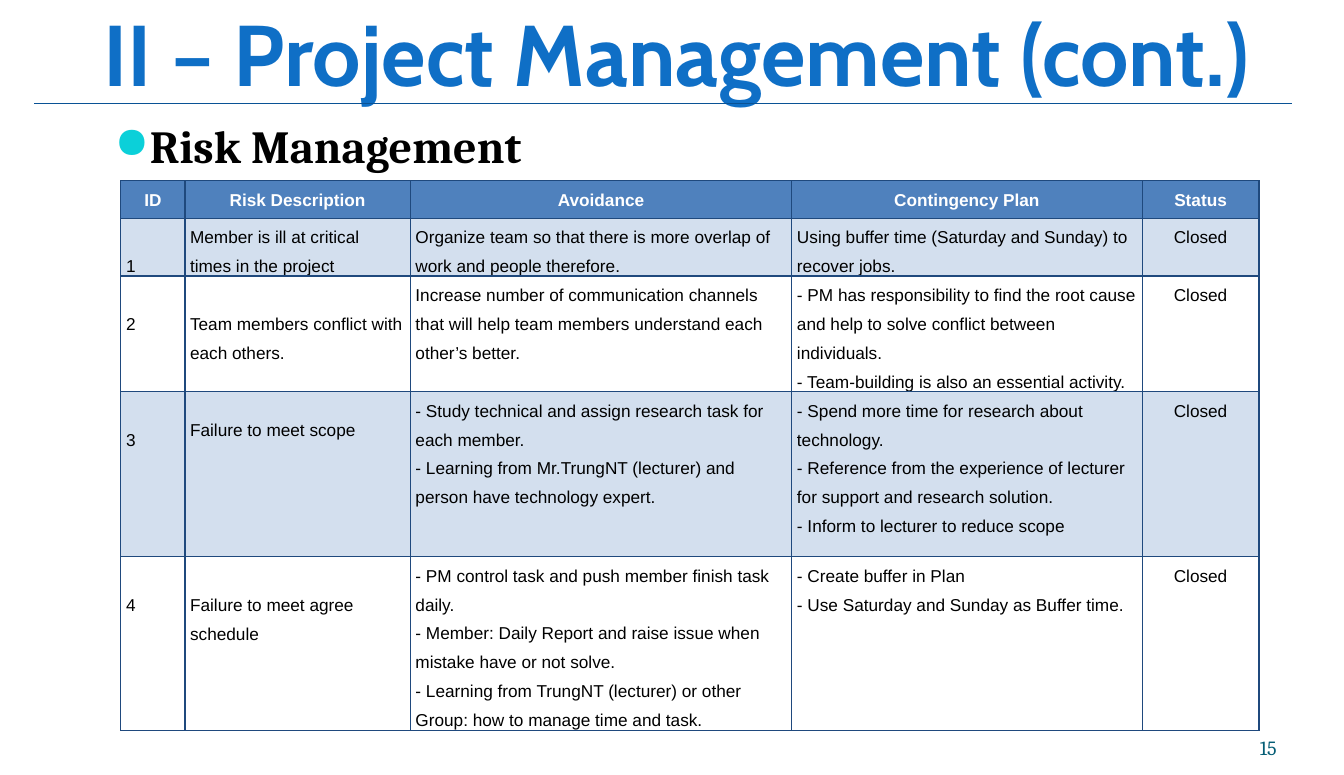
from lxml.etree import SubElement
from pptx import Presentation
from pptx.dml.color import RGBColor
from pptx.enum.shapes import MSO_CONNECTOR as Connector
from pptx.enum.text import MSO_ANCHOR as Anchor, MSO_AUTO_SIZE as AutoSize, PP_ALIGN as Align
from pptx.oxml.ns import qn
from pptx.util import Pt

BLUE = RGBColor(0x0F, 0x6F, 0xC6)
RULE_BLUE = RGBColor(0x09, 0x52, 0x95)
TEAL = RGBColor(0x04, 0x5D, 0x75)
CYAN = RGBColor(0x0B, 0xD0, 0xD9)
HEADER_BLUE = RGBColor(0x4F, 0x81, 0xBD)
BAND_BLUE = RGBColor(0xD3, 0xDF, 0xEE)
BORDER_NAVY = RGBColor(0x1F, 0x49, 0x7D)
WHITE = RGBColor(0xFF, 0xFF, 0xFF)
BLACK = RGBColor(0, 0, 0)

LINE_DROP = 20.2  # one table line at 1.5 spacing
HALF_DROP = 13.2

COLUMN_WIDTHS = [44.6, 157, 265.7, 244, 81.4]
ROW_HEIGHTS = [26, 38, 77, 115, 115]
HEADERS = ["ID", "Risk Description", "Avoidance", "Contingency Plan", "Status"]
# Each risk: drop of the description, description, avoidance, contingency plan
RISKS = [
    (0, "Member is ill at critical times in the project",
     ["Organize team so that there is more overlap of work and people therefore."],
     ["Using buffer time (Saturday and Sunday) to recover jobs."]),
    (LINE_DROP, "Team members conflict with each others.",
     ["Increase number of communication channels that will help team members "
      "understand each other’s better."],
     ["- PM has responsibility to find the root cause and help to solve conflict "
      "between individuals.",
      "- Team-building is also an essential activity."]),
    (HALF_DROP, "Failure to meet scope",
     ["- Study technical and assign research task for each member.",
      "- Learning from Mr.TrungNT (lecturer) and person have technology expert."],
     ["- Spend more time for research about technology.",
      "- Reference from the experience of lecturer for support and research solution.",
      "- Inform to lecturer to reduce scope"]),
    (LINE_DROP, "Failure to meet agree schedule",
     ["- PM control task and push member finish task daily.",
      "- Member: Daily Report and raise issue when mistake have or not solve.",
      "- Learning from TrungNT (lecturer) or other Group: how to manage time and task."],
     ["- Create buffer in Plan", "- Use Saturday and Sunday as Buffer time."]),
]


def add_solid_fill(parent, color):
    fill = SubElement(parent, qn("a:solidFill"))
    SubElement(fill, qn("a:srgbClr"), val=str(color))


class SlideBuilder:
    TITLE = dict(name="Cabin", size=Pt(60), bold=True, color=BLUE)
    HEADING = dict(name="Cambria", size=Pt(32), bold=True, color=BLACK)
    NUMBER = dict(name="Cambria", size=Pt(14), bold=False, color=TEAL)
    HEADER = dict(name="Arial", size=Pt(12), bold=True, color=WHITE)
    CELL = dict(name="Arial", size=Pt(12), bold=False, color=BLACK)

    def __init__(self, presentation):
        self.slide = presentation.slides.add_slide(presentation.slide_layouts[5])

    def format_font(self, font, style):
        for name, value in style.items():
            if name == "color":
                font.color.rgb = value
            else:
                setattr(font, name, value)

    def fill_text(self, frame, lines, style, align=Align.LEFT, spacing=None):
        for index, line in enumerate(lines):
            paragraph = frame.paragraphs[0] if index == 0 else frame.add_paragraph()
            paragraph.alignment = align
            paragraph.line_spacing = spacing
            run = paragraph.add_run()
            run.text = line
            self.format_font(run.font, style)

    def format_frame(self, frame, margins, anchor):
        settings = dict(zip(("margin_left", "margin_top", "margin_right", "margin_bottom"),
                            map(Pt, margins)))
        settings.update(word_wrap=True, auto_size=AutoSize.NONE, vertical_anchor=anchor)
        for name, value in settings.items():
            setattr(frame, name, value)

    def title(self, text, left, top, width, height):
        title = self.slide.shapes.title
        title.left, title.top, title.width, title.height = map(Pt, (left, top, width, height))
        self.format_frame(title.text_frame, (0, 4.3, 0, 0), Anchor.BOTTOM)
        self.fill_text(title.text_frame, [text], self.TITLE)
        properties = title.text_frame.paragraphs[0].runs[0].font._element
        outline = properties.makeelement(qn("a:ln"), {"w": str(Pt(1.45))})
        add_solid_fill(outline, WHITE)
        properties.insert(0, outline)

    def text(self, text, box, style, margins=(0, 0, 0, 0), anchor=Anchor.TOP, align=Align.LEFT):
        frame = self.slide.shapes.add_textbox(*map(Pt, box)).text_frame
        self.format_frame(frame, margins, anchor)
        self.fill_text(frame, [text], style, align)
        return frame.paragraphs[0]

    def bullet(self, paragraph, color, indent):
        properties = paragraph._p.get_or_add_pPr()
        properties.set("marL", str(Pt(indent)))
        properties.set("indent", str(Pt(-indent)))
        bullet_color = SubElement(properties, qn("a:buClr"))
        SubElement(bullet_color, qn("a:srgbClr"), val=str(color))
        SubElement(properties, qn("a:buSzPct"), val="95000")
        SubElement(properties, qn("a:buChar"), char="●")

    def rule(self, left, right, y):
        line = self.slide.shapes.add_connector(Connector.STRAIGHT, Pt(left), Pt(y), Pt(right), Pt(y))
        line.line.color.rgb = RULE_BLUE
        line.line.width = Pt(0.75)
        SubElement(line._element.spPr, qn("a:effectLst"))

    def table(self, left, top):
        shape = self.slide.shapes.add_table(
            len(ROW_HEIGHTS), len(COLUMN_WIDTHS), Pt(left), Pt(top),
            Pt(sum(COLUMN_WIDTHS)), Pt(sum(ROW_HEIGHTS)))
        table = shape.table
        for column, width in zip(table.columns, COLUMN_WIDTHS):
            column.width = Pt(width)
        for row, height in zip(table.rows, ROW_HEIGHTS):
            row.height = Pt(height)
        return table

    def cell(self, cell, lines, style, fill=None, align=Align.LEFT, drop=0):
        """Fill one table cell; drop is the gap above its text."""
        cell.margin_left = cell.margin_right = Pt(3.6)
        cell.margin_top, cell.margin_bottom = Pt(drop), Pt(0)
        cell.vertical_anchor = Anchor.TOP
        self.fill_text(cell.text_frame, lines, style, align, 1.5)
        properties = cell._tc.get_or_add_tcPr()
        for side in ("lnL", "lnR", "lnT", "lnB"):
            border = SubElement(properties, qn(f"a:{side}"), w=str(Pt(1)))
            add_solid_fill(border, BORDER_NAVY)
        if fill is None:
            cell.fill.background()
        else:
            cell.fill.solid()
            cell.fill.fore_color.rgb = fill


def main():
    presentation = Presentation()
    presentation.slide_width, presentation.slide_height = Pt(936), Pt(540)
    builder = SlideBuilder(presentation)

    builder.title("II – Project Management (cont.)", 72, -18, 842.4, 90)
    heading = builder.text("Risk Management", (72, 77.8, 842.4, 345.6), builder.HEADING,
                           margins=(7.9, 4.3, 7.9, 4.3))
    builder.bullet(heading, CYAN, 24.5)
    builder.text("15", (811.4, 500.4, 77.8, 28.8), builder.NUMBER,
                 anchor=Anchor.BOTTOM, align=Align.RIGHT)
    builder.rule(24, 900, 72)

    table = builder.table(84.2, 126)
    for column, header in enumerate(HEADERS):
        builder.cell(table.cell(0, column), [header], builder.HEADER, HEADER_BLUE, Align.CENTER)
    for row, (drop, description, avoidance, plan) in enumerate(RISKS, start=1):
        contents = [
            ([str(row)], Align.LEFT, LINE_DROP),
            ([description], Align.LEFT, drop),
            (avoidance, Align.LEFT, 0),
            (plan, Align.LEFT, 0),
            (["Closed"], Align.CENTER, 0),
        ]
        fill = BAND_BLUE if row % 2 else None
        for column, (lines, align, gap) in enumerate(contents):
            builder.cell(table.cell(row, column), lines, builder.CELL, fill, align, gap)

    presentation.save("out.pptx")


if __name__ == "__main__":
    main()
